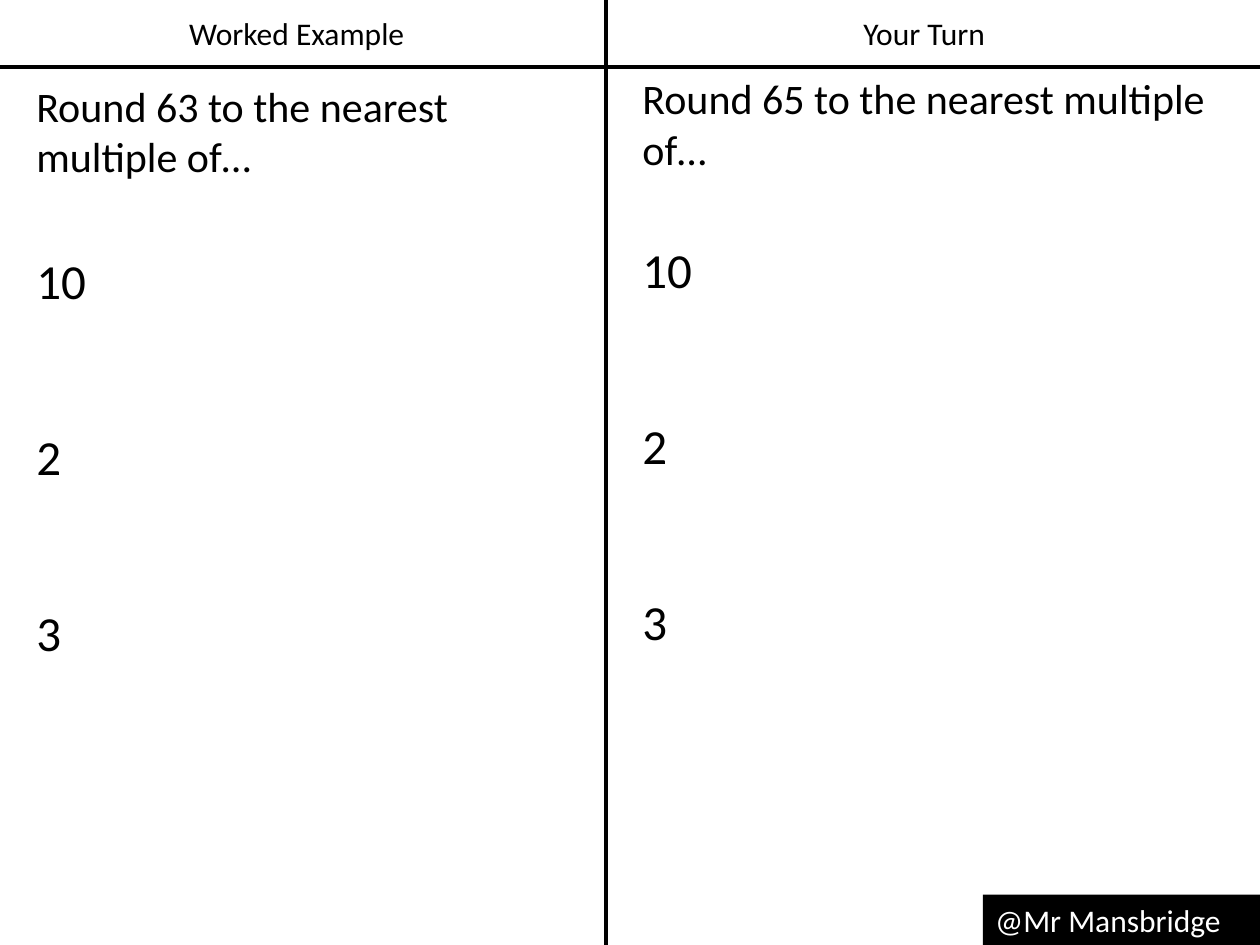
"""Build a worked example slide on rounding to the nearest multiple."""
import pptx
import pptx.util
import pptx.dml.color
import pptx.enum.shapes
import pptx.enum.text
import lxml.etree

Inches = pptx.util.Inches
Pt = pptx.util.Pt
ALIGN = pptx.enum.text.PP_ALIGN


def tint(code):
    """Turn a hex string into a colour."""
    return pptx.dml.color.RGBColor.from_string(code)


def write(text, left, top, width, height, size=18, color="000000",
          align=ALIGN.LEFT, gap=0, fill=None):
    """Place text, one paragraph a line, on a box that may be filled."""
    area = [Inches(n) for n in (left, top, width, height)]
    if fill:
        box = slide.shapes.add_shape(pptx.enum.shapes.MSO_SHAPE.RECTANGLE, *area)
        box.shadow.inherit = False
        box.fill.solid()
        box.fill.fore_color.rgb = tint(fill)
        box.line.fill.background()
    else:
        box = slide.shapes.add_textbox(*area)
    frame = box.text_frame
    frame.word_wrap = True
    frame.vertical_anchor = pptx.enum.text.MSO_ANCHOR.TOP
    frame.text = text
    for index, para in enumerate(frame.paragraphs):
        para.alignment = align
        para.space_before = Pt(gap if index else 0)
        font = para.runs[0].font
        font.name = "Calibri"
        font.size = Pt(size)
        font.color.rgb = tint(color)


deck = pptx.Presentation()
deck.slide_width = Inches(10)
deck.slide_height = Inches(7.5)
slide = deck.slides.add_slide(deck.slide_layouts[6])

write("Worked Example", 1.13, 0.06, 2.45, 0.4, align=ALIGN.CENTER)
write("Your Turn", 6.37, 0.06, 1.93, 0.4, align=ALIGN.CENTER)

for ends in ((4.81, 0, 4.81, 7.5), (0, 0.53, 10, 0.53)):
    rule = slide.shapes.add_connector(
        pptx.enum.shapes.MSO_CONNECTOR.STRAIGHT, *[Inches(n) for n in ends])
    rule.line.color.rgb = tint("000000")
    rule.line.width = Pt(2.5)
    lxml.etree.SubElement(rule.element.spPr, pptx.oxml.ns.qn("a:effectLst"))

write("@Mr Mansbridge", 7.8, 7.1, 2.2, 0.4, color="FFFFFF", fill="000000")

for number, left, top, width, start in (
        (63, 0.19, 0.59, 4.47, 1.94), (65, 5, 0.53, 4.81, 1.85)):
    write(f"Round {number} to the nearest multiple of…", left, top, width, 0.91, size=24)
    write("10\n2\n3", left, start, 0.92, 3.4, size=28, gap=67)

deck.save("out.pptx")
